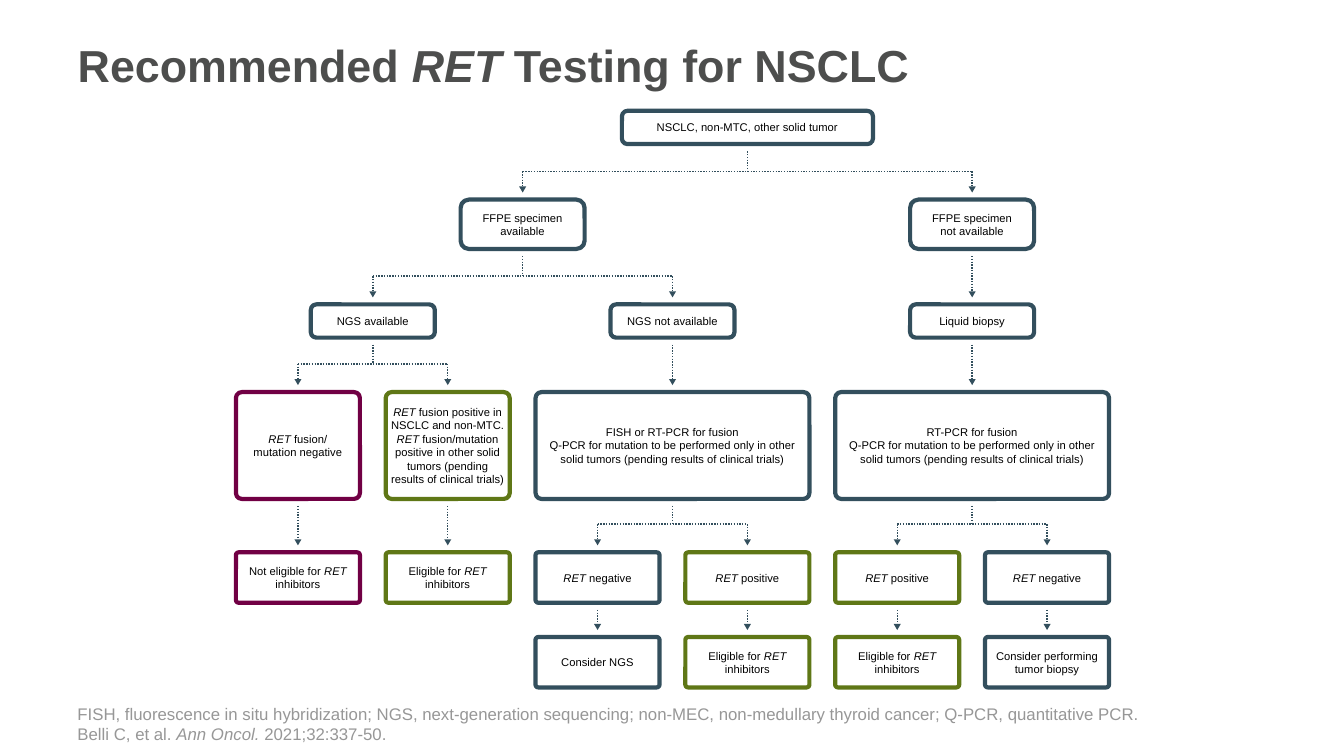
import pptx
import pptx.util
import pptx.dml.color
import pptx.enum.dml
import pptx.enum.shapes
import pptx.enum.text
import pptx.oxml

Inch = pptx.util.Inches
Pt = pptx.util.Pt
Kind = pptx.enum.shapes.MSO_SHAPE
Align = pptx.enum.text.PP_ALIGN
Anchor = pptx.enum.text.MSO_ANCHOR

HUES = {"title": "4D4E4D", "text": "000000", "note": "979797",
        "slate": "334F5D", "plum": "710044", "green": "5F7716"}
LEFT, PITCH = 2.955, 1.486  # centre of column 0, step between columns
WIDE = PITCH + 1.23         # box that spans two columns
ROWS = [(1.1, 0.33), (1.98, 0.49), (3.02, 0.33),
        (3.89, 1.06), (5.48, 0.5), (6.32, 0.5)]  # top, height
HEAD = 0.13                 # arrow tip zone above a box
GAP, DROP = 0.07, 0.15

TRIAL = "Q-PCR for mutation to be performed only in other\n" \
        "solid tumors (pending results of clinical trials)"
FIT = "Eligible for *RET*\ninhibitors"
# row, column, width, colour, text
BOXES = [
    (0, 3, 2.49, "slate", "NSCLC, non-MTC, other solid tumor"),
    (1, 1.5, 1.23, "slate", "FFPE specimen\navailable"),
    (1, 4.5, 1.23, "slate", "FFPE specimen\nnot available"),
    (2, 0.5, 1.23, "slate", "NGS available"),
    (2, 2.5, 1.23, "slate", "NGS not available"),
    (2, 4.5, 1.23, "slate", "Liquid biopsy"),
    (3, 0, 1.23, "plum", "*RET* fusion/\nmutation negative"),
    (3, 1, 1.23, "green", "*RET* fusion positive in\nNSCLC and non-MTC.\n"
     "*RET* fusion/mutation\npositive in other solid\n"
     "tumors (pending\nresults of clinical trials)"),
    (3, 2.5, WIDE, "slate", "FISH or RT-PCR for fusion\n" + TRIAL),
    (3, 4.5, WIDE, "slate", "RT-PCR for fusion\n" + TRIAL),
    (4, 0, 1.23, "plum", "Not eligible for *RET*\ninhibitors"),
    (4, 1, 1.23, "green", FIT),
    (4, 2, 1.23, "slate", "*RET* negative"),
    (4, 3, 1.23, "green", "*RET* positive"),
    (4, 4, 1.23, "green", "*RET* positive"),
    (4, 5, 1.23, "slate", "*RET* negative"),
    (5, 2, 1.23, "slate", "Consider NGS"),
    (5, 3, 1.23, "green", FIT),
    (5, 4, 1.23, "green", FIT),
    (5, 5, 1.23, "slate", "Consider performing\ntumor biopsy"),
]
# parent row, parent column, child columns in the next row
LINKS = [
    (0, 3, [1.5, 4.5]),
    (1, 1.5, [0.5, 2.5]), (1, 4.5, [4.5]),
    (2, 0.5, [0, 1]), (2, 2.5, [2.5]), (2, 4.5, [4.5]),
    (3, 0, [0]), (3, 1, [1]), (3, 2.5, [2, 3]), (3, 4.5, [4, 5]),
    (4, 2, [2]), (4, 3, [3]), (4, 4, [4]), (4, 5, [5]),
]


def tint(name):
    return pptx.dml.color.RGBColor.from_string(HUES[name])


def mid(col):
    return LEFT + PITCH * col


def write(frame, text, size, hue, align, bold=False):
    """Fill a frame; newlines part paragraphs, asterisks mark italics."""
    for num, line in enumerate(text.split("\n")):
        para = frame.paragraphs[0] if num == 0 else frame.add_paragraph()
        para.alignment = align
        for odd, part in enumerate(line.split("*")):
            if part:
                run = para.add_run()
                run.text = part
                font = run.font
                font.name, font.size = "Arial", Pt(size)
                font.bold, font.italic = bold, odd % 2 == 1
                font.color.rgb = tint(hue)


def add_box(slide, row, col, width, hue, text):
    top, high = ROWS[row]
    box = slide.shapes.add_shape(
        Kind.ROUNDED_RECTANGLE, Inch(mid(col) - width / 2), Inch(top),
        Inch(width), Inch(high))
    box.adjustments[0] = 0.168 if row < 3 else 0.055
    box.shadow.inherit = False
    box.fill.background()
    box.line.color.rgb = tint(hue)
    box.line.width = Pt(3)
    frame = box.text_frame
    frame.word_wrap = False
    frame.vertical_anchor = Anchor.MIDDLE
    write(frame, text, 8, "text", Align.CENTER)


def add_line(slide, x1, y1, x2, y2):
    line = slide.shapes.add_connector(
        pptx.enum.shapes.MSO_CONNECTOR.STRAIGHT,
        Inch(x1), Inch(y1), Inch(x2), Inch(y2))
    line.line.color.rgb = tint("slate")
    line.line.width = Pt(1)
    line.line.dash_style = pptx.enum.dml.MSO_LINE.ROUND_DOT
    line._element.spPr.append(
        pptx.oxml.parse_xml('<a:effectLst xmlns:a="http://schemas.'
                            'openxmlformats.org/drawingml/2006/main"/>'))


def add_head(slide, x, y):
    head = slide.shapes.add_shape(
        Kind.ISOSCELES_TRIANGLE, Inch(x - 0.035), Inch(y),
        Inch(0.07), Inch(0.06))
    head.rotation = 180
    head.shadow.inherit = False
    head.fill.solid()
    head.fill.fore_color.rgb = tint("slate")
    head.line.fill.background()


def add_link(slide, row, col, kids):
    """Join a box to the boxes below it, with a crossbar if it forks."""
    start = sum(ROWS[row]) + GAP
    tip = ROWS[row + 1][0] - HEAD
    bar = tip - DROP if len(kids) > 1 else start
    if len(kids) > 1:
        add_line(slide, mid(col), start, mid(col), bar)
        add_line(slide, mid(kids[0]), bar, mid(kids[-1]), bar)
    for kid in kids:
        add_line(slide, mid(kid), bar, mid(kid), tip)
        add_head(slide, mid(kid), tip)


def add_title(slide):
    title = slide.shapes.title
    title.left, title.top = Inch(0.67), Inch(0.22)
    title.width, title.height = Inch(11.75), Inch(0.84)
    title.text_frame.vertical_anchor = Anchor.MIDDLE
    write(title.text_frame, "Recommended *RET* Testing for NSCLC",
          32, "title", Align.LEFT, True)


def add_note(slide):
    note = slide.shapes.add_textbox(
        Inch(0.67), Inch(6.95), Inch(11.75), Inch(0.48))
    frame = note.text_frame
    frame.word_wrap = True
    frame.vertical_anchor = Anchor.BOTTOM
    write(frame, "FISH, fluorescence in situ hybridization; NGS, "
          "next-generation sequencing; non-MEC, non-medullary thyroid "
          "cancer; Q-PCR, quantitative PCR.\n"
          "Belli C, et al. *Ann Oncol. *2021;32:337-50.",
          12, "note", Align.LEFT)


def main():
    deck = pptx.Presentation()
    deck.slide_width, deck.slide_height = Inch(13.33), Inch(7.5)
    slide = deck.slides.add_slide(deck.slide_layouts[5])
    add_title(slide)
    for box in BOXES:
        add_box(slide, *box)
    for link in LINKS:
        add_link(slide, *link)
    add_note(slide)
    deck.save("out.pptx")


if __name__ == "__main__":
    main()
